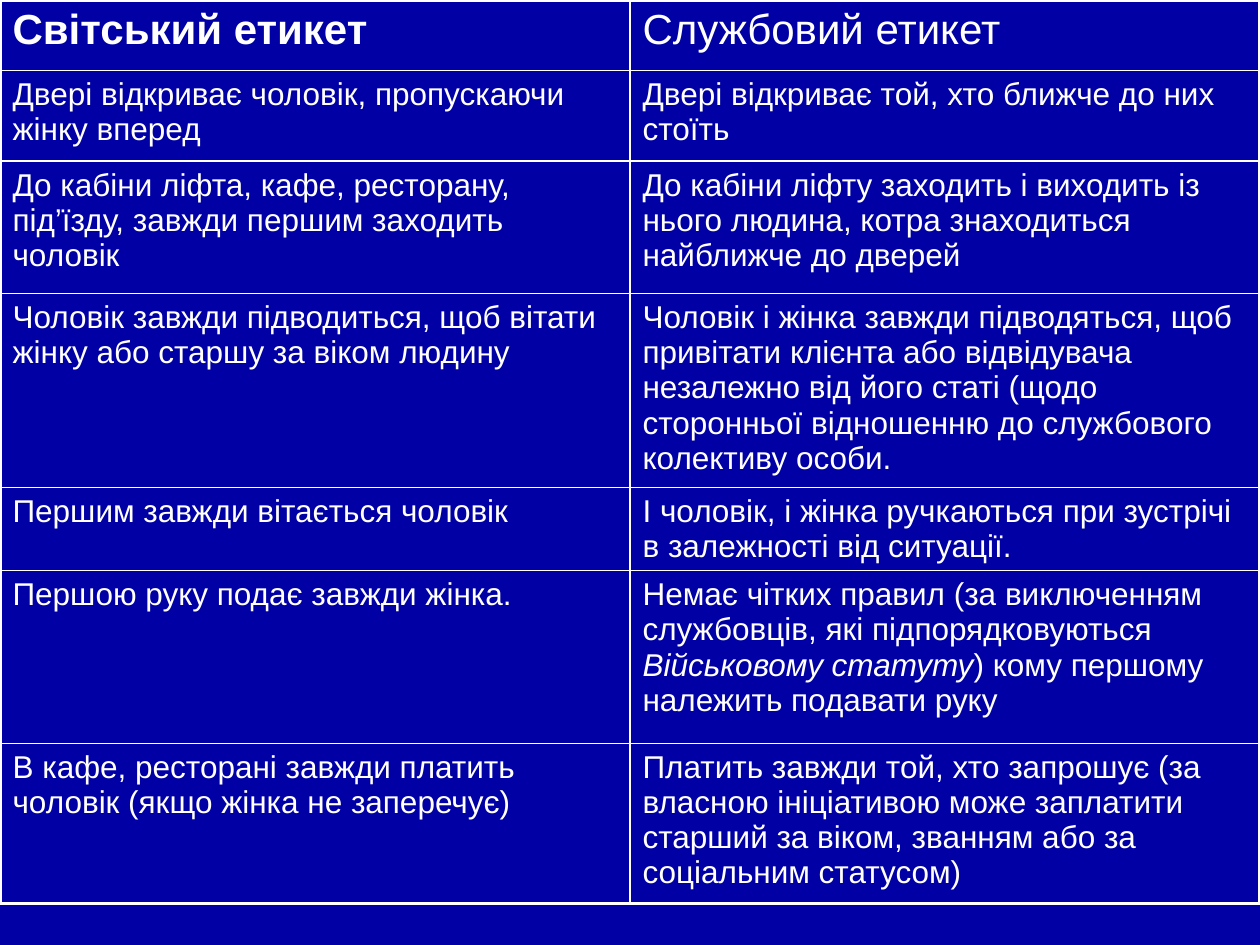
import pptx
import pptx.dml.color
import pptx.oxml
import pptx.oxml.ns
import pptx.util

WHITE, NAVY = "FFFFFF", "0000A4"
THIN, THICK = 1, 2.25
ROW_HEIGHTS = [0.56, 0.72, 1.05, 1.54, 0.65, 1.37, 1.27]
ROWS = [
    ("Світський етикет", "Службовий етикет"),
    ("Двері відкриває чоловік, пропускаючи жінку вперед",
     "Двері відкриває той, хто ближче до них стоїть"),
    ("До кабіни ліфта, кафе, ресторану, під’їзду, завжди першим заходить чоловік",
     "До кабіни ліфту заходить і виходить із нього людина, котра знаходиться найближче до дверей"),
    ("Чоловік завжди підводиться, щоб вітати жінку або старшу за віком людину",
     "Чоловік і жінка завжди підводяться, щоб привітати клієнта або відвідувача незалежно "
     "від його статі (щодо сторонньої відношенню до службового колективу особи."),
    ("Першим завжди вітається чоловік",
     "І чоловік, і жінка ручкаються при зустрічі в залежності від ситуації."),
    ("Першою руку подає завжди жінка.",
     "Немає чітких правил (за виключенням службовців, які підпорядковуються "
     "*Військовому статуту*) кому першому належить подавати руку"),
    ("В кафе, ресторані завжди платить чоловік (якщо жінка не заперечує)",
     "Платить завжди той, хто запрошує (за власною ініціативою може заплатити "
     "старший за віком, званням або за соціальним статусом)"),
]


def rgb(color):
    return pptx.dml.color.RGBColor.from_string(color)


def add_border(cell, side, width):
    cell._tc.get_or_add_tcPr().append(pptx.oxml.parse_xml(
        f'<a:ln{side} {pptx.oxml.ns.nsdecls("a")} w="{pptx.util.Pt(width)}">'
        f'<a:solidFill><a:srgbClr val="{WHITE}"/></a:solidFill></a:ln{side}>'))


prs = pptx.Presentation()
prs.slide_width = pptx.util.Inches(10)
prs.slide_height = pptx.util.Inches(7.5)
s = prs.slides.add_slide(prs.slide_layouts[6])
s.background.fill.solid()
s.background.fill.fore_color.rgb = rgb(NAVY)

n_rows, n_cols = len(ROWS), len(ROWS[0])
table = s.shapes.add_table(n_rows, n_cols, 0, 0, prs.slide_width,
                           pptx.util.Inches(sum(ROW_HEIGHTS))).table
table.horz_banding = False
for column in table.columns:
    column.width = prs.slide_width // n_cols

for i, (height, texts) in enumerate(zip(ROW_HEIGHTS, ROWS)):
    table.rows[i].height = pptx.util.Inches(height)
    for j, text in enumerate(texts):
        cell = table.cell(i, j)
        outer = {"L": j == 0, "R": j == n_cols - 1, "T": i == 0, "B": i == n_rows - 1}
        for side, is_outer in outer.items():
            add_border(cell, side, THICK if is_outer else THIN)
        cell.fill.background()
        p = cell.text_frame.paragraphs[0]
        for k, part in enumerate(text.split("*")):
            r = p.add_run()
            r.text = part
            r.font.color.rgb = rgb(WHITE)
            font = {"name": "Arial", "size": pptx.util.Pt(24 if i == 0 else 18),
                    "bold": i == 0 and j == 0, "italic": k % 2 == 1}
            for name, value in font.items():
                setattr(r.font, name, value)

prs.save("out.pptx")
